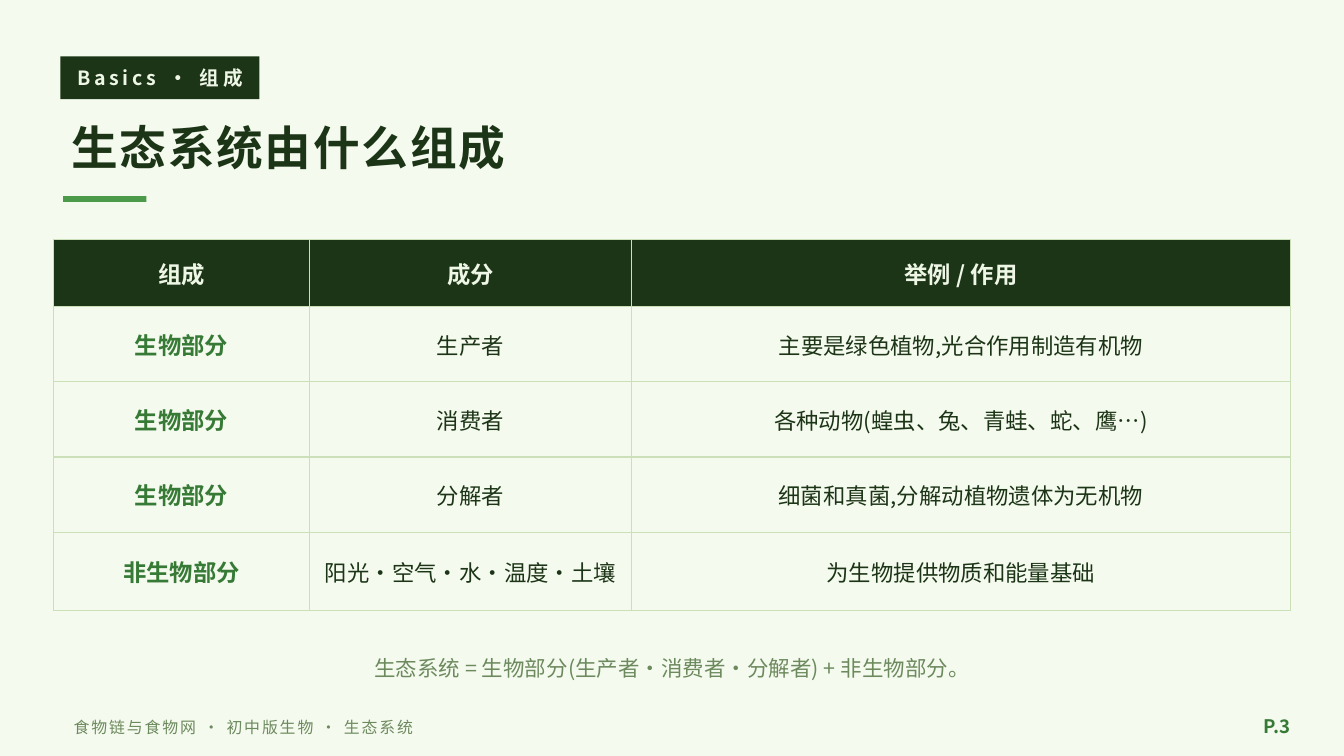
from lxml import etree
from pptx import Presentation
from pptx.dml.color import RGBColor
from pptx.enum import shapes, text
from pptx.oxml import ns
from pptx.util import Pt

# Content
TAG = "Basics · 组成"
TITLE = "生态系统由什么组成"
HEADER = ("组成", "成分", "举例 / 作用")
ROWS = [
    ("生物部分", "生产者", "主要是绿色植物,光合作用制造有机物"),
    ("生物部分", "消费者", "各种动物(蝗虫、兔、青蛙、蛇、鹰…)"),
    ("生物部分", "分解者", "细菌和真菌,分解动植物遗体为无机物"),
    ("非生物部分", "阳光·空气·水·温度·土壤", "为生物提供物质和能量基础"),
]
SUMMARY = "生态系统 = 生物部分(生产者·消费者·分解者) + 非生物部分。"
FOOTER = "食物链与食物网 · 初中版生物 · 生态系统"
PAGE = "P.3"

# Style
FONT = "Noto Sans CJK SC"
PAPER, DARK, PALE = "F5FAEF", "1D3517", "EEF6E6"
GREEN, ACCENT, MUTED, BORDER = "367A36", "4A9A4A", "6D8A5E", "CBDFB8"
LEFT, CENTER, RIGHT = text.PP_ALIGN.LEFT, text.PP_ALIGN.CENTER, text.PP_ALIGN.RIGHT

# Table geometry in points
TABLE_LEFT, TABLE_TOP = 28.8, 128.3
COLUMN_WIDTHS = (136.8, 172.8, 352.8)
HEADER_HEIGHT, ROW_HEIGHT = 36, 40.3


def paint(fill, color):
    fill.solid()
    fill.fore_color.rgb = RGBColor.from_string(color)


def write(text_frame, content, size, color, bold=False, align=LEFT, spacing=0):
    text_frame.text = content
    paragraph = text_frame.paragraphs[0]
    paragraph.alignment = align
    for run in paragraph.runs:
        run.font.size = Pt(size)
        run.font.bold = bold
        paint(run.font.fill, color)
        run.font.name = FONT
        properties = run._r.get_or_add_rPr()
        etree.SubElement(properties, ns.qn("a:ea"), typeface=FONT)
        if spacing:
            properties.set("spc", str(spacing * 100))


def place_text(shape, box, content, size, color, **style):
    shape.left, shape.top, shape.width, shape.height = map(Pt, box)
    frame = shape.text_frame
    frame.word_wrap = True
    frame.auto_size = text.MSO_AUTO_SIZE.NONE
    frame.vertical_anchor = text.MSO_ANCHOR.MIDDLE
    write(frame, content, size, color, **style)


def add_text(slide, box, content, size, color, **style):
    place_text(slide.shapes.add_textbox(*map(Pt, box)), box, content, size, color, **style)


def add_bar(slide, box, color):
    bar = slide.shapes.add_shape(shapes.MSO_SHAPE.RECTANGLE, *map(Pt, box))
    bar.shadow.inherit = False
    paint(bar.fill, color)
    bar.line.fill.background()


def add_borders(cell, color, width):
    properties = cell._tc.get_or_add_tcPr()
    for side in ("lnL", "lnR", "lnT", "lnB"):
        line = etree.SubElement(properties, ns.qn("a:" + side), w=str(Pt(width)))
        fill = etree.SubElement(line, ns.qn("a:solidFill"))
        etree.SubElement(fill, ns.qn("a:srgbClr"), val=color)


def add_components_table(slide):
    rows = [HEADER] + ROWS
    heights = [HEADER_HEIGHT] + [ROW_HEIGHT] * len(ROWS)
    table = slide.shapes.add_table(
        len(rows), len(HEADER), Pt(TABLE_LEFT), Pt(TABLE_TOP),
        Pt(sum(COLUMN_WIDTHS)), Pt(sum(heights))).table
    for column, width in zip(table.columns, COLUMN_WIDTHS):
        column.width = Pt(width)
    for r, (row, height) in enumerate(zip(rows, heights)):
        table.rows[r].height = Pt(height)
        for c, content in enumerate(row):
            if r == 0:
                size, color, bold, background = 12.5, PALE, True, DARK
            elif c == 0:
                size, color, bold, background = 12.5, GREEN, True, PAPER
            else:
                size, color, bold, background = 12, DARK, False, PAPER
            cell = table.cell(r, c)
            cell.vertical_anchor = text.MSO_ANCHOR.MIDDLE
            add_borders(cell, BORDER, 0.75)
            paint(cell.fill, background)
            write(cell.text_frame, content, size, color, bold=bold, align=CENTER)


def main():
    presentation = Presentation()
    presentation.slide_width, presentation.slide_height = Pt(720), Pt(405)
    slide = presentation.slides.add_slide(presentation.slide_layouts[5])
    paint(slide.background.fill, PAPER)

    # Heading
    add_bar(slide, (32.4, 30.2, 106.6, 23), DARK)
    add_text(slide, (32.4, 29.5, 106.6, 24.5), TAG, 10.5, PALE,
             bold=True, align=CENTER, spacing=2)
    place_text(slide.shapes.title, (31, 56.2, 648, 44.6), TITLE, 25, DARK,
               bold=True, spacing=1)
    add_bar(slide, (33.8, 105.1, 44.6, 3.1), ACCENT)

    # Table and summary
    add_components_table(slide)
    add_text(slide, (36, 339.8, 648, 36), SUMMARY, 11.5, MUTED, align=CENTER)

    # Footer
    add_text(slide, (32.4, 378.7, 468, 21.6), FOOTER, 8.5, MUTED, spacing=1)
    add_text(slide, (655.2, 377.3, 43.2, 23), PAGE, 10, GREEN, bold=True, align=RIGHT)

    presentation.save("out.pptx")


if __name__ == "__main__":
    main()
